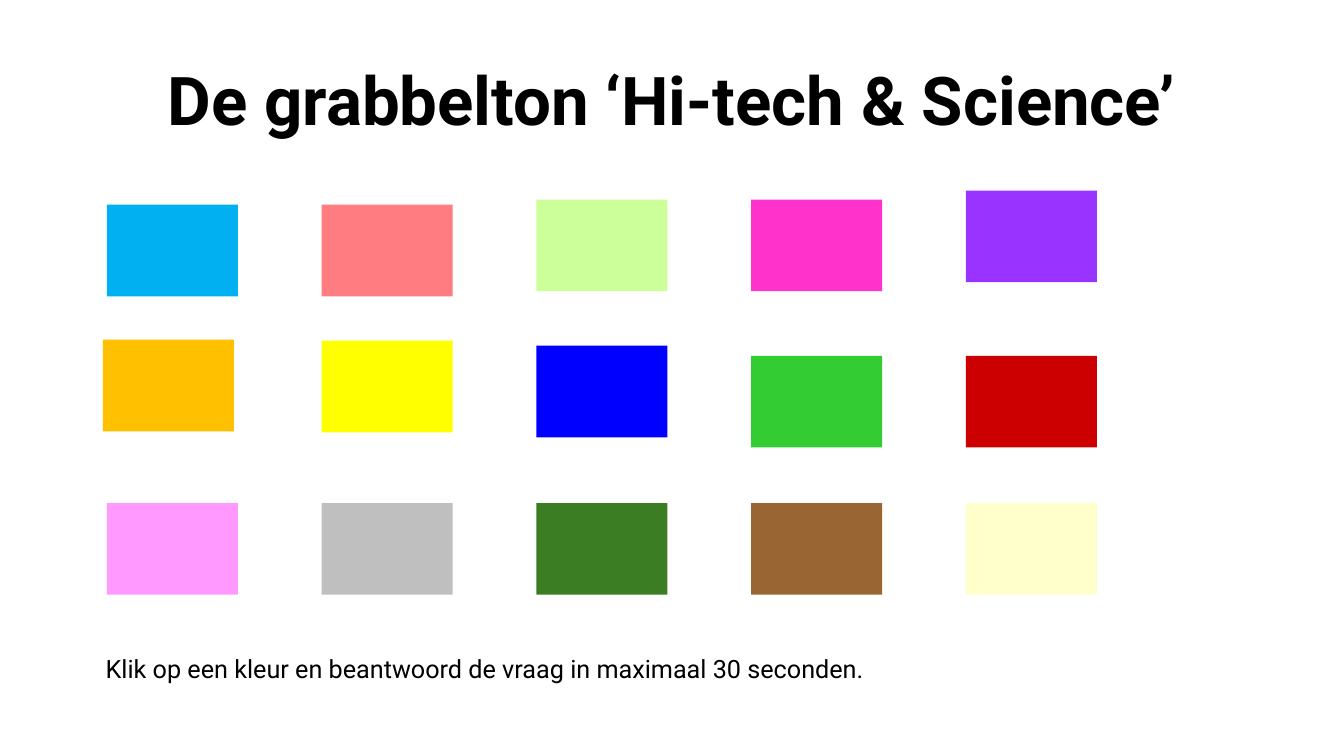
from pptx import Presentation
from pptx.dml.color import RGBColor
from pptx.enum.shapes import MSO_SHAPE
from pptx.enum.text import MSO_ANCHOR, PP_ALIGN
from pptx.util import Inches, Pt

RECTANGLE = MSO_SHAPE.RECTANGLE
TOP = MSO_ANCHOR.TOP
LEFT, CENTER = PP_ALIGN.LEFT, PP_ALIGN.CENTER

BLACK = RGBColor(0x00, 0x00, 0x00)
SKY = RGBColor(0x00, 0xB0, 0xF0)
SALMON = RGBColor(0xFF, 0x7C, 0x80)
LIME = RGBColor(0xCC, 0xFF, 0x99)
MAGENTA = RGBColor(0xFF, 0x33, 0xCC)
PURPLE = RGBColor(0x99, 0x33, 0xFF)
ORANGE = RGBColor(0xFF, 0xC0, 0x00)
YELLOW = RGBColor(0xFF, 0xFF, 0x00)
BLUE = RGBColor(0x00, 0x00, 0xFF)
GREEN = RGBColor(0x33, 0xCC, 0x33)
RED = RGBColor(0xCC, 0x00, 0x00)
PINK = RGBColor(0xFF, 0x99, 0xFF)
GREY = RGBColor(0xBF, 0xBF, 0xBF)
FOREST = RGBColor(0x3B, 0x7D, 0x23)
BROWN = RGBColor(0x99, 0x66, 0x33)
CREAM = RGBColor(0xFF, 0xFF, 0xCC)

CARD_WIDTH, CARD_HEIGHT = 1.3, 0.91
FIRST_COLUMN, COLUMN_STEP = 1.06, 2.13
# Each card is a colour with its own top edge, as the rows are uneven.
CARD_ROWS = [
    [(SKY, 2.03), (SALMON, 2.03), (LIME, 1.98), (MAGENTA, 1.98), (PURPLE, 1.89)],
    [(ORANGE, 3.37), (YELLOW, 3.38), (BLUE, 3.43), (GREEN, 3.53), (RED, 3.53)],
    [(color, 4.99) for color in (PINK, GREY, FOREST, BROWN, CREAM)],
]
NUDGE_LEFT = {ORANGE: 0.04}


class QuizSlide:
    FONT = "Roboto"

    def __init__(self, presentation):
        self.slide = presentation.slides.add_slide(presentation.slide_layouts[5])

    def set_text(self, box, text, size, bold=False, align=LEFT):
        frame = box.text_frame
        frame.word_wrap = True
        frame.vertical_anchor = TOP
        frame.text = text
        paragraph = frame.paragraphs[0]
        paragraph.alignment = align
        font = paragraph.font
        font.name, font.size, font.bold = self.FONT, Pt(size), bold
        font.color.rgb = BLACK

    def title(self, text, left, top, width, height):
        heading = self.slide.shapes.title
        heading.left, heading.top = Inches(left), Inches(top)
        heading.width, heading.height = Inches(width), Inches(height)
        self.set_text(heading, text, 48, bold=True, align=CENTER)

    def instruction(self, text, left, top, width, height):
        box = self.slide.shapes.add_textbox(
            Inches(left), Inches(top), Inches(width), Inches(height))
        self.set_text(box, text, 18)

    def card(self, color, left, top):
        card = self.slide.shapes.add_shape(
            RECTANGLE, Inches(left), Inches(top),
            Inches(CARD_WIDTH), Inches(CARD_HEIGHT))
        card.shadow.inherit = False
        card.fill.solid()
        card.fill.fore_color.rgb = color
        card.line.fill.background()


def main():
    presentation = Presentation()
    presentation.slide_width, presentation.slide_height = Inches(13.33), Inches(7.5)
    quiz = QuizSlide(presentation)
    quiz.title("De grabbelton ‘Hi-tech & Science’", 0.51, 0.53, 12.3, 0.91)
    for row in CARD_ROWS:
        for column, (color, top) in enumerate(row):
            left = FIRST_COLUMN + column * COLUMN_STEP - NUDGE_LEFT.get(color, 0)
            quiz.card(color, left, top)
    quiz.instruction(
        "Klik op een kleur en beantwoord de vraag in maximaal 30 seconden.",
        0.95, 6.43, 11.33, 0.4)
    presentation.save("out.pptx")


if __name__ == "__main__":
    main()
